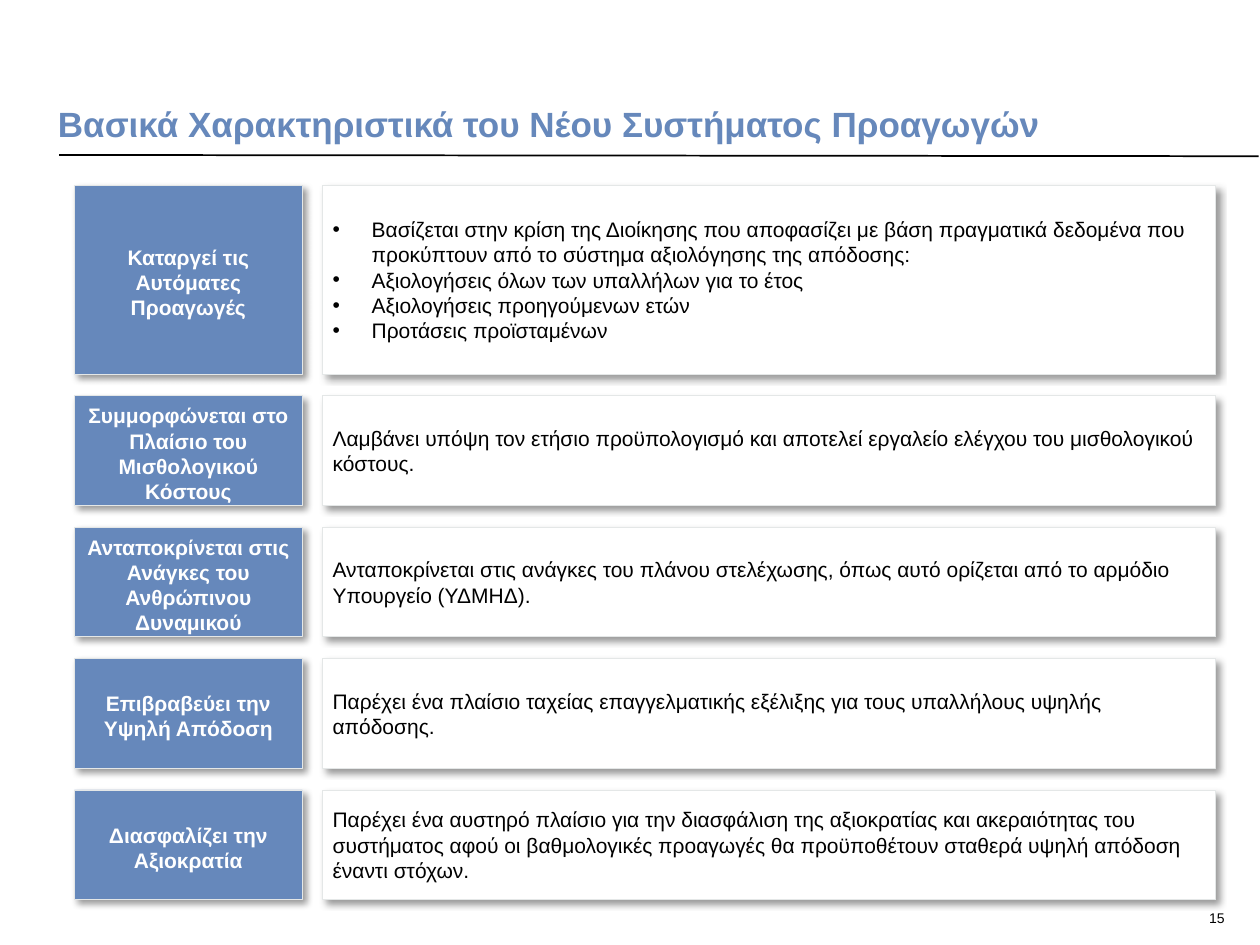
from lxml.etree import SubElement
from pptx import Presentation
from pptx.dml.color import RGBColor
from pptx.enum.shapes import MSO_CONNECTOR as Connector, MSO_SHAPE as Shape
from pptx.enum.text import MSO_ANCHOR as Anchor, PP_ALIGN as Align
from pptx.oxml.ns import qn
from pptx.util import Inches, Pt

TITLE = "Βασικά Χαρακτηριστικά του Νέου Συστήματος Προαγωγών"
PAGE_NUMBER = "15"
FEATURES = [
    ("Καταργεί τις Αυτόματες Προαγωγές", [
        "Βασίζεται στην κρίση της Διοίκησης που αποφασίζει με βάση πραγματικά δεδομένα "
        "που προκύπτουν από το σύστημα αξιολόγησης της απόδοσης:",
        "Αξιολογήσεις όλων των υπαλλήλων για το έτος",
        "Αξιολογήσεις προηγούμενων ετών",
        "Προτάσεις προϊσταμένων",
    ]),
    ("Συμμορφώνεται στο Πλαίσιο του Μισθολογικού Κόστους", [
        "Λαμβάνει υπόψη τον ετήσιο προϋπολογισμό και αποτελεί εργαλείο ελέγχου "
        "του μισθολογικού κόστους.",
    ]),
    ("Ανταποκρίνεται στις Ανάγκες του Ανθρώπινου Δυναμικού", [
        "Ανταποκρίνεται στις ανάγκες του πλάνου στελέχωσης, όπως αυτό ορίζεται "
        "από το αρμόδιο Υπουργείο (ΥΔΜΗΔ).",
    ]),
    ("Επιβραβεύει την Υψηλή Απόδοση", [
        "Παρέχει ένα πλαίσιο ταχείας επαγγελματικής εξέλιξης για τους υπαλλήλους "
        "υψηλής απόδοσης.",
    ]),
    ("Διασφαλίζει την Αξιοκρατία", [
        "Παρέχει ένα αυστηρό πλαίσιο για την διασφάλιση της αξιοκρατίας και ακεραιότητας "
        "του συστήματος αφού οι βαθμολογικές προαγωγές θα προϋποθέτουν σταθερά υψηλή "
        "απόδοση έναντι στόχων.",
    ]),
]
COLORS = {"blue": "6688BB", "border": "E4E7E7", "white": "FFFFFF", "black": "000000"}
FONT = "Arial"
TOP, BOTTOM = 1.47, 7.14
TALL, SHORT = 1.5, 0.87
LABEL_LEFT, LABEL_WIDTH = 0.59, 1.81
DETAIL_LEFT, DETAIL_WIDTH = 2.56, 7.09
INDENT = 0.31


def color(name):
    return RGBColor.from_string(COLORS[name])


def write(shape, lines, size=12, ink="black", bold=False, align=Align.LEFT,
          anchor=Anchor.MIDDLE, insets=(0, 0, 0, 0), bullets=False):
    frame = shape.text_frame
    frame.word_wrap = True
    frame.vertical_anchor = anchor
    (frame.margin_left, frame.margin_top,
     frame.margin_right, frame.margin_bottom) = map(Inches, insets)
    frame.text = "\n".join(lines)
    for paragraph in frame.paragraphs:
        paragraph.alignment = align
        if bullets:
            properties = paragraph._p.get_or_add_pPr()
            properties.set("marL", str(Inches(INDENT)))
            properties.set("indent", str(-Inches(INDENT)))
            SubElement(properties, qn("a:buFont"), typeface=FONT)
            SubElement(properties, qn("a:buChar"), char="•")
        font = paragraph.font
        font.name, font.size, font.bold = FONT, Pt(size), bold
        font.color.rgb = color(ink)


def add_card(group, left, top, width, height, fill):
    card = group.shapes.add_shape(Shape.RECTANGLE, *map(Inches, (left, top, width, height)))
    card.fill.solid()
    card.fill.fore_color.rgb = color(fill)
    card.line.color.rgb = color("border")
    card.line.width = Pt(0.5)
    card.shadow.inherit = False
    effects = card._element.spPr.find(qn("a:effectLst"))
    shadow = SubElement(effects, qn("a:outerShdw"), blurRad=str(Pt(4)), dist=str(Pt(3)),
                        dir=str(45 * 60000), algn="tl", rotWithShape="0")
    shade = SubElement(shadow, qn("a:srgbClr"), val=COLORS["black"])
    SubElement(shade, qn("a:alpha"), val="40000")
    return card


def main():
    deck = Presentation()
    deck.slide_width, deck.slide_height = Inches(10), Inches(7.5)
    slide = deck.slides.add_slide(deck.slide_layouts[6])

    rule = slide.shapes.add_connector(
        Connector.STRAIGHT, *map(Inches, (0.47, 1.23, 9.99, 1.24)))
    rule.line.color.rgb = color("black")
    rule.line.width = Pt(1)
    SubElement(rule._element.spPr, qn("a:effectLst"))

    number = slide.shapes.add_textbox(*map(Inches, (9.29, 7.18, 0.43, 0.25)))
    write(number, [PAGE_NUMBER], size=8, align=Align.RIGHT, anchor=Anchor.TOP,
          insets=(0, 0.04, 0, 0))
    title = slide.shapes.add_textbox(*map(Inches, (0.46, 0.2, 9.06, 0.95)))
    write(title, [TITLE], size=20, ink="blue", bold=True, anchor=Anchor.BOTTOM)

    heights = [TALL if len(details) > 1 else SHORT for _, details in FEATURES]
    gap = (BOTTOM - TOP - sum(heights)) / (len(FEATURES) - 1)
    top = TOP
    for (heading, details), height in zip(FEATURES, heights):
        row = slide.shapes.add_group_shape()
        label = add_card(row, LABEL_LEFT, top, LABEL_WIDTH, height, "blue")
        write(label, [heading], ink="white", bold=True, align=Align.CENTER,
              insets=(0.08, 0.12, 0.08, 0.08))
        detail = add_card(row, DETAIL_LEFT, top, DETAIL_WIDTH, height, "white")
        write(detail, details, insets=(0.08, 0.08, 0.08, 0.08), bullets=len(details) > 1)
        top += height + gap

    deck.save("out.pptx")


if __name__ == "__main__":
    main()
